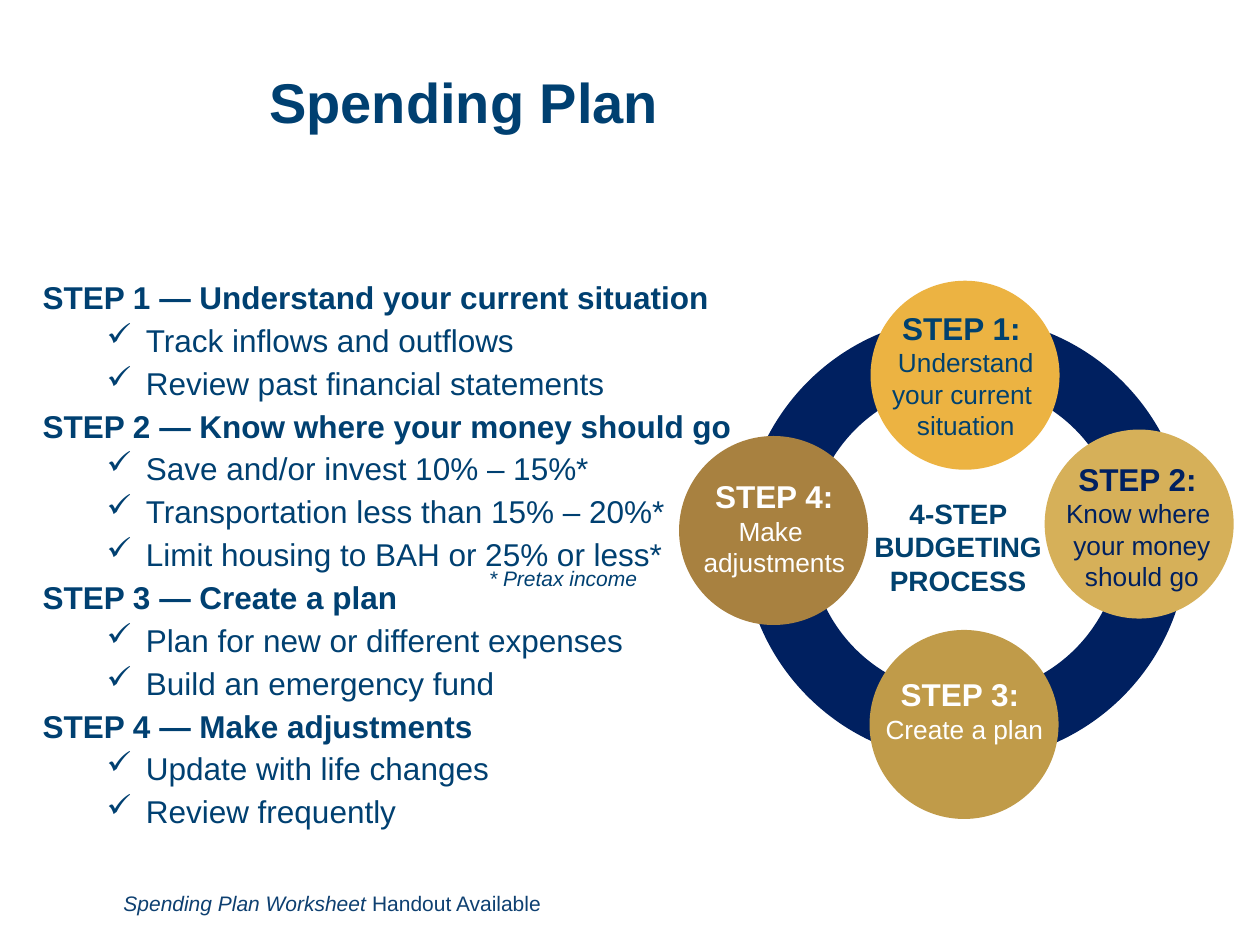
import pptx
import pptx.util
import pptx.dml.color
import pptx.enum.shapes
import pptx.enum.text
import pptx.oxml.ns
import lxml.etree

Cm, Pt = pptx.util.Cm, pptx.util.Pt
RGBColor = pptx.dml.color.RGBColor
ALIGN = pptx.enum.text.PP_ALIGN
ANCHOR = pptx.enum.text.MSO_ANCHOR
OVAL = pptx.enum.shapes.MSO_SHAPE.OVAL
qn = pptx.oxml.ns.qn

BLUE = RGBColor(0x00, 0x40, 0x71)
TEAL = RGBColor(0x01, 0x41, 0x6E)
NAVY = RGBColor(0x00, 0x20, 0x60)
INK = RGBColor(0x0E, 0x40, 0x71)
WHITE = RGBColor(0xFF, 0xFF, 0xFF)
AMBER = RGBColor(0xEC, 0xB3, 0x42)
SAND = RGBColor(0xD6, 0xB0, 0x59)
GOLD = RGBColor(0xC0, 0x9B, 0x49)
BROWN = RGBColor(0xA8, 0x81, 0x40)

PLAN = [
    ("STEP 1 — Understand your current situation",
     ["Track inflows and outflows", "Review past financial statements"]),
    ("STEP 2 — Know where your money should go",
     ["Save and/or invest 10% – 15%*", "Transportation less than 15% – 20%*",
      "Limit housing to BAH or 25% or less*"]),
    ("STEP 3 — Create a plan",
     ["Plan for new or different expenses", "Build an emergency fund"]),
    ("STEP 4 — Make adjustments",
     ["Update with life changes", "Review frequently"]),
]

# circle corner, fill, text box, text colour, heading, lines
STEPS = [
    ((17.55, 5.66), AMBER, (17.63, 6.1, 3.68, 2.95), TEAL,
     "STEP 1: ", ["Understand your current ", "situation"]),
    ((21.06, 8.66), SAND, (21.18, 9.14, 3.68, 3.05), NAVY,
     "STEP 2: ", ["Know where ", "your money", "should go"]),
    ((17.53, 12.7), GOLD, (17.6, 13.49, 3.68, 2.34), WHITE,
     "STEP 3: ", ["Create a plan"]),
    ((13.69, 8.79), BROWN, (13.77, 9.5, 3.68, 2.34), WHITE,
     "STEP 4:", ["Make ", "adjustments"]),
]
RING = (15.65, 7.06, 7.62, 7.62)
DISC = 3.81


def write(frame, text, size=18, color=BLUE, bold=False, italic=False,
          align=ALIGN.LEFT, before=0, indent=0, hang=0, mark=None, line=None):
    """Add one paragraph to the frame, using its empty first one if any."""
    para = frame.paragraphs[0]
    if para.runs:
        para = frame.add_paragraph()
        para.space_before = Pt(before)
    props = para._p.get_or_add_pPr()
    props.set("marL", str(Cm(indent)))
    props.set("indent", str(Cm(-hang)))
    if mark:
        lxml.etree.SubElement(props, qn("a:buChar")).set("char", mark)
    para.alignment = align
    if line:
        para.line_spacing = line
    return add_run(para, text, size, color, bold, italic)


def add_run(para, text, size, color, bold=False, italic=False):
    run = para.add_run()
    run.text = text
    font = run.font
    font.name, font.size = "Arial", Pt(size)
    font.bold, font.italic = bold, italic
    font.color.rgb = color
    return para


def add_box(shapes, place):
    frame = shapes.add_textbox(*map(Cm, place)).text_frame
    frame.word_wrap = True
    return frame


def add_oval(shapes, place):
    oval = shapes.add_shape(OVAL, *map(Cm, place))
    oval.shadow.inherit = False
    return oval


def draw_plan(shapes):
    frame = add_box(shapes, (0.58, 5.48, 14.94, 11.1))
    for head, items in PLAN:
        write(frame, head, bold=True, before=2.9, indent=0.03)
        for item in items:
            write(frame, item, before=2.9, indent=2.11, hang=0.79, mark="✓")
    note = add_box(shapes, (8.31, 11.27, 5.38, 0.84))
    write(note, "* Pretax income", size=12, italic=True, indent=1.3)


def draw_cycle(shapes):
    ring = add_oval(shapes, RING)
    ring.fill.background()
    ring.line.color.rgb = NAVY
    ring.line.width = Pt(38.5)
    for spot, fill, *_ in STEPS:
        disc = add_oval(shapes, (*spot, DISC, DISC))
        disc.fill.solid()
        disc.fill.fore_color.rgb = fill
        disc.line.fill.background()
    hub = add_box(shapes, (16.99, 9.88, 4.65, 2.31))
    for text in ("4-STEP BUDGETING", "PROCESS"):
        write(hub, text, size=16, color=TEAL, bold=True, align=ALIGN.CENTER)
    for _, _, place, color, head, lines in STEPS:
        frame = add_box(shapes, place)
        write(frame, head, color=color, bold=True, align=ALIGN.CENTER)
        for text in lines:
            write(frame, text, size=15, color=color, align=ALIGN.CENTER)


def main():
    deck = pptx.Presentation()
    deck.slide_width, deck.slide_height = Cm(25.4), Cm(19.05)
    shapes = deck.slides.add_slide(deck.slide_layouts[6]).shapes

    title = add_box(shapes, (5.18, 0.28, 18.44, 3.68))
    title.vertical_anchor = ANCHOR.MIDDLE
    write(title, "Spending Plan", size=32, bold=True, line=0.9)

    draw_plan(shapes)
    draw_cycle(shapes.add_group_shape().shapes)

    foot = add_box(shapes, (2.24, 17.83, 12.4, 0.76))
    para = write(foot, "Spending Plan Worksheet", size=12, color=INK, italic=True)
    add_run(para, " Handout Available", 12, INK)

    deck.save("out.pptx")


if __name__ == "__main__":
    main()
